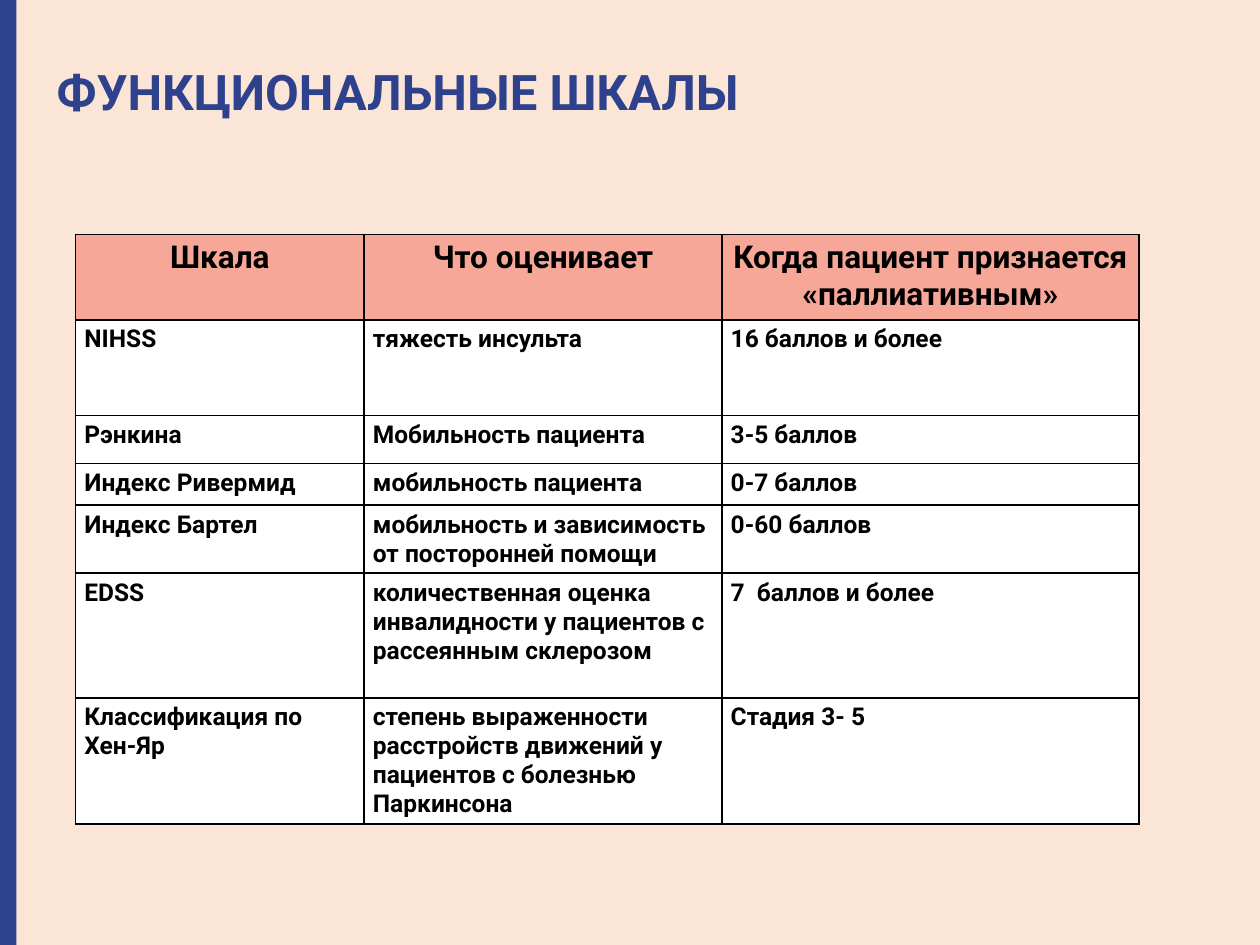
from lxml.etree import fromstring
from pptx import Presentation
from pptx.dml.color import RGBColor
from pptx.enum.shapes import MSO_SHAPE
from pptx.enum.text import MSO_ANCHOR, PP_ALIGN
from pptx.oxml.ns import nsdecls
from pptx.util import Inches, Pt

BLUE = RGBColor(0x2E, 0x41, 0x8D)
PEACH = RGBColor(0xFB, 0xE5, 0xD6)
CORAL = RGBColor(0xF7, 0xA7, 0x97)
WHITE = RGBColor(0xFF, 0xFF, 0xFF)
BLACK = RGBColor(0x00, 0x00, 0x00)
FONT = "Roboto"

TITLE = "ФУНКЦИОНАЛЬНЫЕ ШКАЛЫ"
SCALES = [
    ("Шкала", "Что оценивает", "Когда пациент признается «паллиативным»"),
    ("NIHSS", "тяжесть инсульта", "16 баллов и более"),
    ("Рэнкина", "Мобильность пациента", "3-5 баллов"),
    ("Индекс Ривермид", "мобильность пациента", "0-7 баллов"),
    ("Индекс Бартел", "мобильность и зависимость от посторонней помощи", "0-60 баллов"),
    ("EDSS", "количественная оценка инвалидности у пациентов с рассеянным склерозом",
     "7  баллов и более "),
    ("Классификация по Хен-Яр",
     "степень выраженности расстройств движений у пациентов с болезнью Паркинсона",
     "Стадия 3- 5"),
]
COLUMN_WIDTHS = [2.29, 2.84, 3.31]
ROW_HEIGHTS = [0.68, 0.76, 0.38, 0.33, 0.53, 0.99, 0.99]


def style_text(paragraph, size, color):
    for run in paragraph.runs:
        run.font.name = FONT
        run.font.size = Pt(size)
        run.font.bold = True
        run.font.color.rgb = color


def add_borders(cell):
    properties = cell._tc.get_or_add_tcPr()
    for position, side in enumerate(("lnL", "lnR", "lnT", "lnB")):
        properties.insert(position, fromstring(
            f'<a:{side} {nsdecls("a")} w="{Pt(1)}"><a:solidFill>'
            f'<a:srgbClr val="{BLACK}"/></a:solidFill></a:{side}>'))


def fill_cell(cell, content, is_header):
    cell.fill.solid()
    cell.fill.fore_color.rgb = CORAL if is_header else WHITE
    cell.margin_left = cell.margin_right = Inches(0.07)
    cell.margin_top = cell.margin_bottom = Inches(0.04)
    cell.text_frame.text = content
    paragraph = cell.text_frame.paragraphs[0]
    paragraph.alignment = PP_ALIGN.CENTER if is_header else PP_ALIGN.LEFT
    style_text(paragraph, 18 if is_header else 14, BLACK)
    add_borders(cell)


def add_title(slide):
    title = slide.shapes.title
    title.left, title.top = Inches(0.35), Inches(0.49)
    title.width, title.height = Inches(7.87), Inches(0.52)
    frame = title.text_frame
    frame.text = TITLE
    frame.word_wrap = True
    frame.vertical_anchor = MSO_ANCHOR.MIDDLE
    heading = frame.paragraphs[0]
    heading.alignment = PP_ALIGN.LEFT
    heading.line_spacing = 0.9
    style_text(heading, 28, BLUE)


def add_scales_table(slide):
    table = slide.shapes.add_table(
        len(SCALES), len(COLUMN_WIDTHS), Inches(0.6), Inches(1.86),
        Inches(sum(COLUMN_WIDTHS)), Inches(sum(ROW_HEIGHTS))).table
    for column, width in zip(table.columns, COLUMN_WIDTHS):
        column.width = Inches(width)
    for row, height in zip(table.rows, ROW_HEIGHTS):
        row.height = Inches(height)
    for r, scale in enumerate(SCALES):
        for c, content in enumerate(scale):
            fill_cell(table.cell(r, c), content, is_header=r == 0)


def main():
    deck = Presentation()
    deck.slide_width, deck.slide_height = Inches(10), Inches(7.5)
    slide = deck.slides.add_slide(deck.slide_layouts[5])
    slide.background.fill.solid()
    slide.background.fill.fore_color.rgb = PEACH

    side_bar = slide.shapes.add_shape(
        MSO_SHAPE.RECTANGLE, 0, 0, Inches(0.13), deck.slide_height)
    side_bar.shadow.inherit = False
    side_bar.fill.solid()
    side_bar.fill.fore_color.rgb = BLUE
    side_bar.line.fill.background()

    add_title(slide)
    add_scales_table(slide)
    deck.save("out.pptx")


if __name__ == "__main__":
    main()
